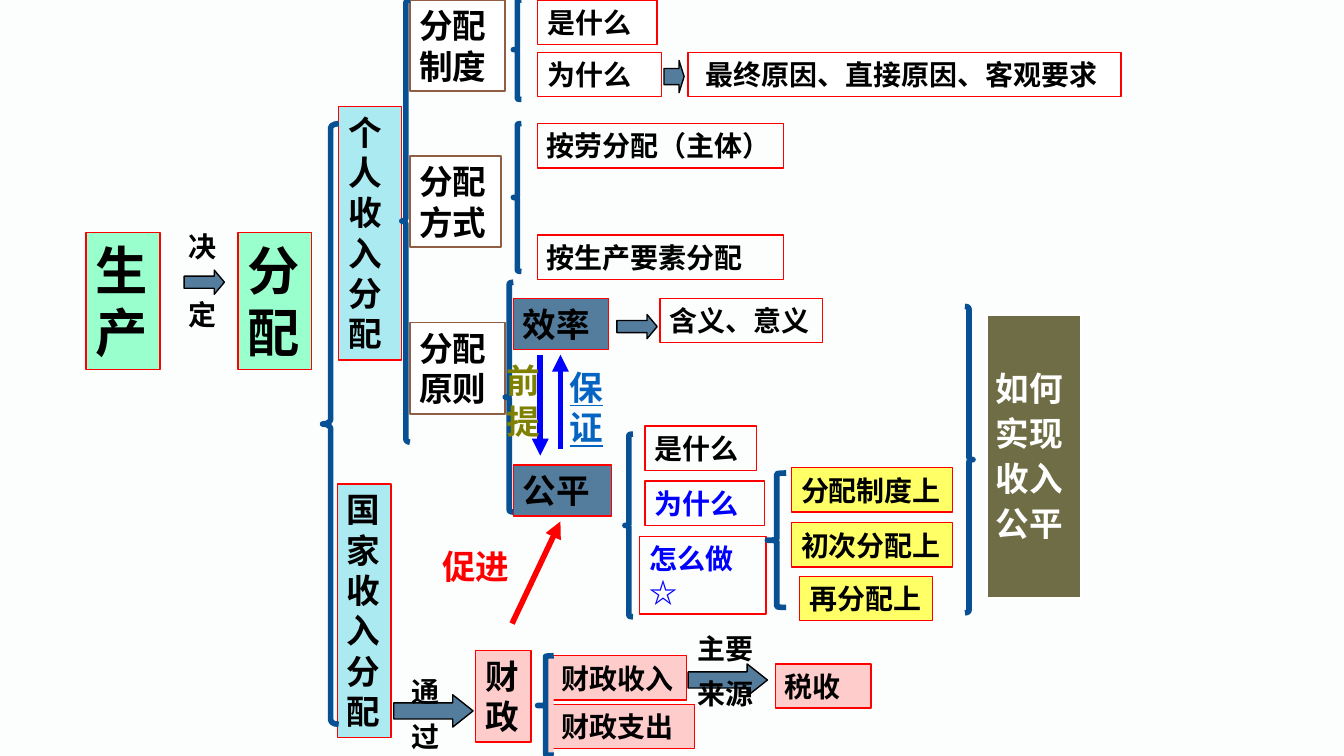
import pptx
import pptx.util
import pptx.dml.color
import pptx.enum.shapes
import pptx.enum.text
import pptx.oxml
import pptx.oxml.ns
from lxml import etree

SHAPE = pptx.enum.shapes.MSO_SHAPE
RED, BROWN, NAVY, BLUE, BLACK, WHITE = "FF0000", "905E43", "065093", "0000FF", "000000", "FFFFFF"
CYAN, MINT, STEEL, YELLOW, PINK = "ACEAF2", "99FFCC", "547D9D", "FFFF66", "FFCCCC"

prs = pptx.Presentation()
prs.slide_width = pptx.util.Inches(10)
prs.slide_height = prs.slide_width * 9 // 16
unit = prs.slide_width / 100
s = prs.slides.add_slide(prs.slide_layouts[6])


def paint(target, color):
    if color is None:
        target.background()
        return
    if hasattr(target, "solid"):
        target.solid()
        target.fore_color.rgb = pptx.dml.color.RGBColor.from_string(color)
    else:
        target.rgb = pptx.dml.color.RGBColor.from_string(color)


def write(sp, text, size, color, font="Arial", underline=None, line=None, gap=0, left=0.07, top=0.04):
    tf = sp.text_frame
    tf.word_wrap = True
    tf.vertical_anchor = pptx.enum.text.MSO_ANCHOR.TOP
    tf.margin_left, tf.margin_right = pptx.util.Inches(left), pptx.util.Inches(0.07)
    tf.margin_top, tf.margin_bottom = pptx.util.Inches(top), pptx.util.Inches(0.04)
    tf.text = text
    for i, p in enumerate(tf.paragraphs):
        p.alignment = pptx.enum.text.PP_ALIGN.LEFT
        p.line_spacing = line
        if i:
            p.space_before = pptx.util.Pt(gap)
        for r in p.runs:
            r.font.name, r.font.size = font, pptx.util.Pt(size)
            r.font.bold, r.font.underline = True, underline
            paint(r.font.color, color)


paint(s.background.fill, "FCFDFD")

tall, one, two, six = 10.2, 3.3, 6.8, 18.9
noto = {"font": "Noto Sans CJK SC"}
boxes = [
    ("生\n产", 6.4, 17.3, 5.5, tall, MINT, RED, 28, BLACK, {}),
    ("分\n配", 17.7, 17.3, 5.5, tall, MINT, RED, 28, BLACK, {}),
    ("个人\n收入\n分配", 25.2, 7.9, 4.7, six, CYAN, RED, 18, BLACK, {}),
    ("国\n家\n收\n入\n分\n配", 25.1, 36, 4, six, CYAN, RED, 18, BLACK, {}),
    ("分配\n制度", 30.5, 0, 7.1, two, WHITE, BROWN, 18, BLACK, {}),
    ("分配\n方式", 30.5, 11.6, 6.8, two, WHITE, BROWN, 18, BLACK, {}),
    ("分配\n原则", 30.5, 24, 7.1, two, WHITE, BROWN, 18, BLACK, {}),
    ("是什么", 40, 0, 8.9, one, WHITE, RED, 15, BLACK, {}),
    ("为什么", 40, 3.9, 9.2, one, WHITE, RED, 15, BLACK, {}),
    ("最终原因、直接原因、客观要求", 51.2, 3.9, 32.2, one, WHITE, RED, 15, BLACK, {"left": 0.13}),
    ("按劳分配（主体）", 40, 9.2, 18.3, one, None, RED, 15, BLACK, noto),
    ("按生产要素分配", 40, 17.5, 18.3, one, None, RED, 15, BLACK, noto),
    ("效率", 38.2, 22.2, 7.1, 3.8, STEEL, RED, 18, BLACK, {}),
    ("公平", 38.2, 34.6, 7.3, 3.8, STEEL, RED, 18, BLACK, {}),
    ("含义、意义", 49.1, 22.2, 12.1, one, None, RED, 15, BLACK, {}),
    ("是什么", 48, 31.7, 8.3, one, None, RED, 15, BLACK, {}),
    ("为什么", 48, 35.8, 8.9, one, None, RED, 15, BLUE, {}),
    ("怎么做☆", 47.6, 39.9, 9.4, 5.8, None, RED, 15, BLUE, {}),
    ("分配制度上", 58.9, 34.8, 12, one, YELLOW, RED, 15, BLACK, {}),
    ("初次分配上", 58.9, 38.9, 12, one, YELLOW, RED, 15, BLACK, {}),
    ("再分配上", 59.5, 42.9, 9.9, one, YELLOW, RED, 15, BLACK, {}),
    ("财\n政", 35.4, 48.4, 4.1, two, PINK, RED, 18, BLACK, {}),
    ("财政收入", 41.1, 48.8, 10, one, PINK, RED, 15, BLACK, {}),
    ("财政支出", 41.1, 52.4, 10.6, one, PINK, RED, 15, BLACK, {}),
    ("税收", 57.7, 49.4, 7.1, one, PINK, RED, 15, BLACK, {}),
    ("如何\n实现\n收入\n公平", 73.4, 23.4, 7.1, 21.1, "6E6D45", WHITE, 18, WHITE,
     {"line": 0.7, "gap": 9, "top": 0.48}),
]
weights = {RED: 0.75, BROWN: 1, WHITE: 1.5}
for text, x, y, w, h, fill, edge, size, color, extra in boxes:
    sp = s.shapes.add_shape(SHAPE.RECTANGLE, *(round(v * unit) for v in (x, y, w, h)))
    sp.shadow.inherit = False
    paint(sp.fill, fill)
    paint(sp.line.color, edge)
    sp.line.width = pptx.util.Pt(weights[edge])
    write(sp, text, size, color, **extra)

L, R, A = SHAPE.LEFT_BRACE, SHAPE.RIGHT_BRACE, SHAPE.RIGHT_ARROW
marks = [
    (L, 24, 9.2, 1.2, 44.7, (0.27, 0.5), None),
    (L, 29.9, 0, 0.6, 32.9, (0.38, 0.5), None),
    (L, 38.2, 0, 0.6, 7.4, (0.09, 0.5), None),
    (L, 38.2, 9.2, 0.6, 11, (0.13, 0.5), None),
    (L, 37.6, 21, 0.6, 17.1, (0.2, 0.5), None),
    (L, 46.5, 32.3, 0.6, 13.6, (0.16, 0.5), None),
    (L, 57.1, 35.2, 1.4, 10, (0.05, 0.5), None),
    (L, 40, 48.8, 1.2, 7.4, (0.04, 0.5), PINK),
    (R, 71.8, 22.8, 0.6, 22.8, (0.27, 0.5), None),
    (A, 13.7, 20.1, 3, 1.8, (0.5, 0.42), STEEL),
    (A, 45.9, 23.4, 3, 1.8, (0.5, 0.42), STEEL),
    (A, 49.4, 4.5, 1.5, 2.4, (0.5, 0.25), STEEL),
    (A, 29.3, 51.7, 5.9, 2.4, (0.5, 0.63), STEEL),
    (A, 51.2, 49.4, 5.9, 2.4, (0.5, 0.63), STEEL),
]
for kind, x, y, w, h, bends, fill in marks:
    sp = s.shapes.add_shape(kind, *(round(v * unit) for v in (x, y, w, h)))
    sp.shadow.inherit = False
    for i, bend in enumerate(bends):
        sp.adjustments[i] = bend
    paint(sp.fill, fill)
    paint(sp.line.color, BLACK if kind == A else NAVY)
    sp.line.width = pptx.util.Pt(0.75 if kind == A else 3)

for x1, y1, x2, y2, color in [
    (40.2, 26.4, 40.2, 33.9, BLUE),
    (41.7, 33.4, 41.7, 26.4, BLUE),
    (38.1, 46.4, 41.7, 38.8, RED),
]:
    c = s.shapes.add_connector(pptx.enum.shapes.MSO_CONNECTOR.STRAIGHT,
                               *(round(v * unit) for v in (x1, y1, x2, y2)))
    paint(c.line.color, color)
    c.line.width = pptx.util.Pt(3)
    ln = c.line._get_or_add_ln()
    etree.SubElement(ln, pptx.oxml.ns.qn("a:tailEnd"), type="triangle")
    etree.SubElement(c._element.spPr, pptx.oxml.ns.qn("a:effectLst"))

labels = [
    ("决\n定", 13.3, 16.7, 3.6, 8.3, 15, BLACK, {"gap": 18}),
    ("通\n过", 29.9, 50.6, 3.6, 5.7, 15, BLACK, {"line": 0.65, "gap": 12}),
    ("主要\n来源", 51.2, 47.4, 6.5, 5.7, 15, BLACK, {"line": 0.65, "gap": 12}),
    ("前提", 37, 26.4, 3.8, 6.8, 18, "808000", {}),
    ("保证", 41.7, 26.9, 3.8, 6.8, 18, "0563C1", {"underline": True}),
    ("促进", 32.2, 40.2, 8.9, 3.8, 18, RED, {}),
]
for text, x, y, w, h, size, color, extra in labels:
    sp = s.shapes.add_textbox(*(round(v * unit) for v in (x, y, w, h)))
    write(sp, text, size, color, **extra)

prs.save("out.pptx")
